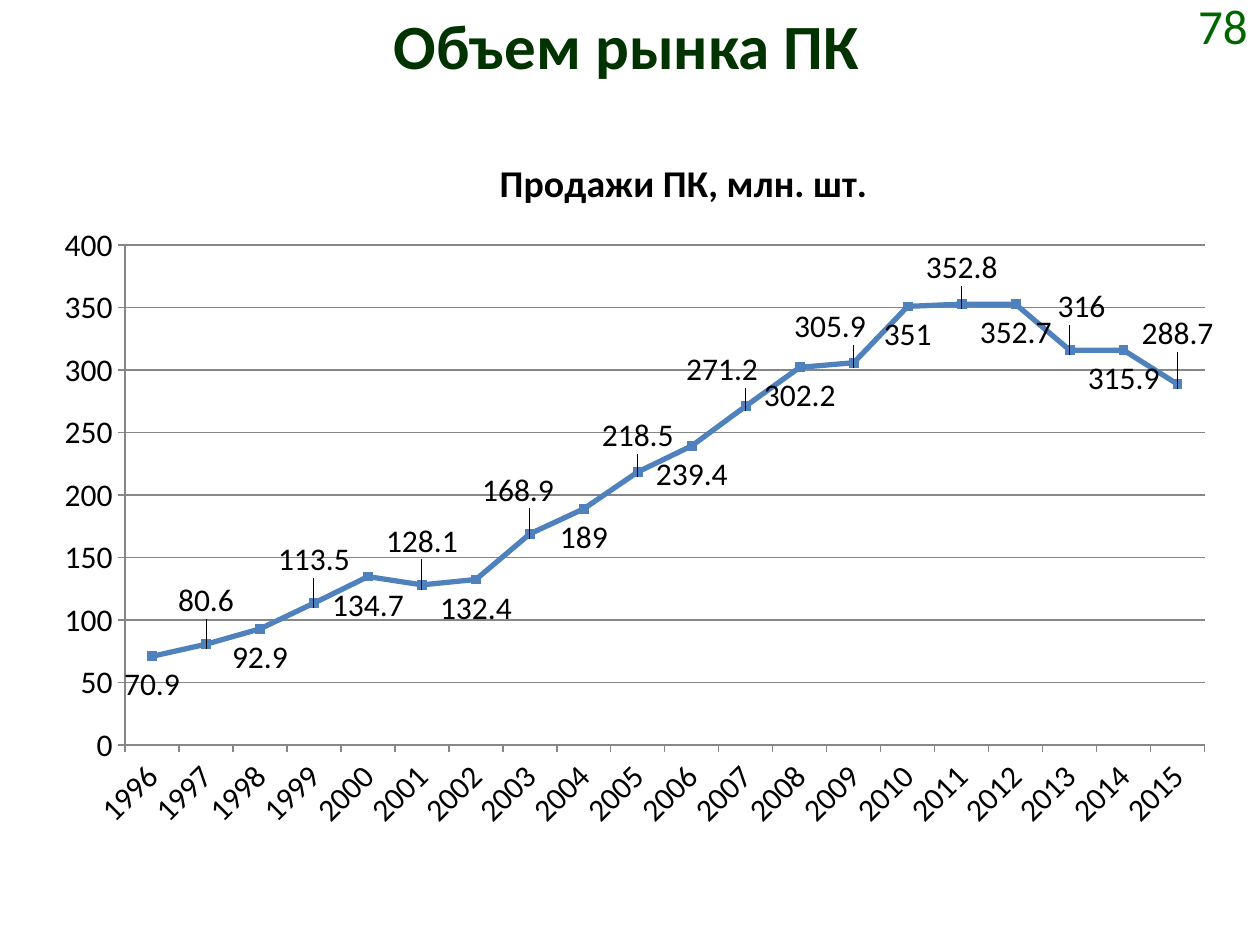
from lxml import etree
from pptx import Presentation
from pptx.chart.data import CategoryChartData
from pptx.dml.color import RGBColor
from pptx.enum.chart import XL_CHART_TYPE, XL_LABEL_POSITION, XL_MARKER_STYLE, XL_TICK_MARK
from pptx.enum.text import MSO_ANCHOR, PP_ALIGN
from pptx.oxml.ns import qn
from pptx.util import Pt

LINE_MARKERS = XL_CHART_TYPE.LINE_MARKERS
BELOW = XL_LABEL_POSITION.BELOW
SQUARE = XL_MARKER_STYLE.SQUARE
OUTSIDE = XL_TICK_MARK.OUTSIDE
TOP, MIDDLE = MSO_ANCHOR.TOP, MSO_ANCHOR.MIDDLE
CENTER, RIGHT = PP_ALIGN.CENTER, PP_ALIGN.RIGHT
FONT = "Calibri"
BLUE, GRAY, BLACK = "4F81BD", "868686", "000000"

FIRST_YEAR = 1996
SALES = [70.9, 80.6, 92.9, 113.5, 134.7, 128.1, 132.4, 168.9, 189, 218.5,
         239.4, 271.2, 302.2, 305.9, 351, 352.8, 352.7, 316, 315.9, 288.7]
# Label shifts from the place below the point, as shares of the chart size
LABEL_SHIFTS = {1: (0, -0.1), 3: (0, -0.1), 5: (0, -0.1), 7: (-0.01, -0.1),
                9: (0, -0.09), 11: (-0.02, -0.09), 13: (-0.02, -0.09),
                15: (0, -0.09), 17: (0.01, -0.1), 19: (0, -0.11)}

color = RGBColor.from_string


def add_text(text, left, top, width, height, size, text_color, bold=False,
             align=CENTER, anchor=TOP):
    shape = slide.shapes.add_textbox(Pt(left), Pt(top), Pt(width), Pt(height))
    frame = shape.text_frame
    frame.word_wrap = True
    frame.vertical_anchor = anchor
    paragraph = frame.paragraphs[0]
    paragraph.alignment = align
    run = paragraph.add_run()
    run.text = text
    run.font.name, run.font.size, run.font.bold = FONT, Pt(size), bold
    run.font.color.rgb = color(text_color)


def set_layout(element, index, **values):
    """Place a chart part by hand, with the layout as its child at index."""
    for old_layout in element.findall(qn("c:layout")):
        element.remove(old_layout)
    layout = etree.Element(qn("c:layout"))
    manual = etree.SubElement(layout, qn("c:manualLayout"))
    for tag, value in values.items():
        etree.SubElement(manual, qn(f"c:{tag}")).set("val", str(value))
    element.insert(index, layout)


presentation = Presentation()
presentation.slide_width, presentation.slide_height = Pt(720), Pt(540)
slide = presentation.slides.add_slide(presentation.slide_layouts[6])

add_text("Объем рынка ПК", 34, 0, 648, 68, 36, "003300", bold=True)
add_text("78", 646.5, 0, 73.5, 28, 28, "006600", align=RIGHT, anchor=MIDDLE)

chart_data = CategoryChartData()
chart_data.categories = [str(FIRST_YEAR + i) for i in range(len(SALES))]
chart_data.add_series("Продажи ПК, млн. шт.", SALES)
chart = slide.shapes.add_chart(LINE_MARKERS, Pt(24), Pt(68.5), Pt(678), Pt(414),
                               chart_data).chart
chart.has_legend = False
chart.font.name, chart.font.size = FONT, Pt(18)
chart.font.color.rgb = color(BLACK)

chart.has_title = True
title = chart.chart_title
title.include_in_layout = False
title.text_frame.text = "Продажи ПК, млн. шт."
title_font = title.text_frame.paragraphs[0].runs[0].font
title_font.name, title_font.size, title_font.bold = FONT, Pt(21.6), True
title_font.color.rgb = color(BLACK)
set_layout(title._element, 1, xMode="edge", yMode="edge", x=0.38, y=0.04)

category_axis, value_axis = chart.category_axis, chart.value_axis
value_axis.minimum_scale, value_axis.maximum_scale = 0, 400
value_axis.major_unit = 50
value_axis.has_major_gridlines = True
for axis in (category_axis, value_axis):
    axis.major_tick_mark = OUTSIDE
    axis.tick_labels.font.size = Pt(18)
lines = [category_axis.format.line, value_axis.format.line,
         value_axis.major_gridlines.format.line]
for line in lines:
    line.color.rgb = color(GRAY)
    line.width = Pt(0.75)
category_axis._element.find(f"{qn('c:txPr')}/{qn('a:bodyPr')}").set("rot", "-2700000")

plot = chart.plots[0]
plot.vary_by_categories = False
plot_area = plot._element.getparent()
set_layout(plot_area, 0, layoutTarget="inner", xMode="edge", yMode="edge",
           x=0.07, y=0.173, w=0.91, h=0.69)

series = plot.series[0]
series.smooth = False
series.format.line.color.rgb = color(BLUE)
series.format.line.width = Pt(3)
series.marker.style, series.marker.size = SQUARE, 5
series.marker.format.fill.solid()
series.marker.format.fill.fore_color.rgb = color(BLUE)
series.marker.format.line.color.rgb = color(BLUE)

labels = series.data_labels
labels.show_value = True
labels.position = BELOW
for i in LABEL_SHIFTS:
    series.points[i].data_label.position = BELOW
for label in series._element.iter(qn("c:dLbl")):
    x, y = LABEL_SHIFTS[int(label.find(qn("c:idx")).get("val"))]
    set_layout(label, 1, x=x, y=y)

presentation.save("out.pptx")
